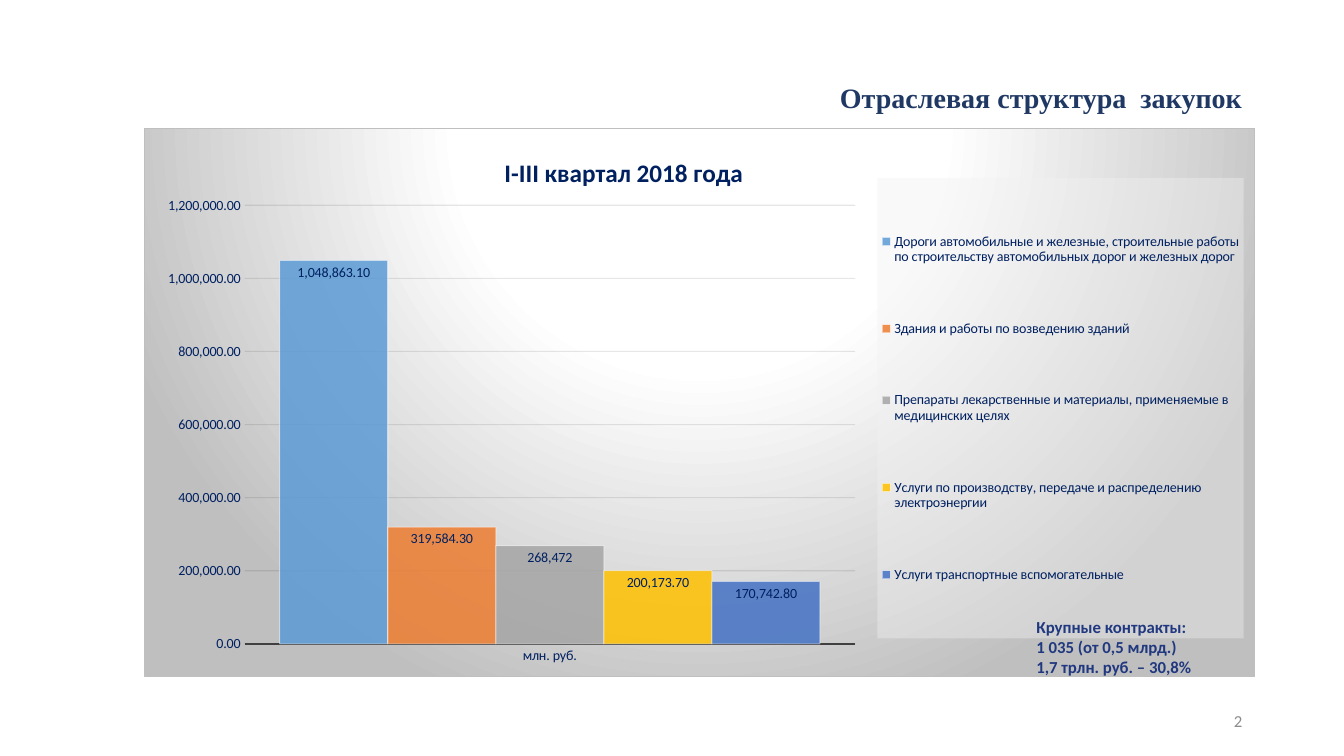
"""Build the slide on the structure of purchases by sector."""
from dataclasses import dataclass

from lxml import etree
from pptx import Presentation
from pptx import util as u
from pptx.chart import data
from pptx.dml.color import RGBColor
from pptx.enum import chart as ch
from pptx.enum import text as tx
from pptx.oxml import parse_xml
from pptx.oxml.ns import nsdecls, qn

NAVY = RGBColor(0x00, 0x20, 0x60)
HEAD = RGBColor(0x20, 0x38, 0x64)
NOTE = RGBColor(0x20, 0x38, 0x7F)
GRAY = RGBColor(0x8C, 0x8C, 0x8C)
DARK = RGBColor(0x40, 0x40, 0x40)
GRID = RGBColor(0x0D, 0x0D, 0x0D)
WHITE = RGBColor(0xFF, 0xFF, 0xFF)
BLUE = RGBColor(0x5B, 0x9B, 0xD5)
ORANGE = RGBColor(0xED, 0x7D, 0x31)
SILVER = RGBColor(0xA5, 0xA5, 0xA5)
GOLD = RGBColor(0xFF, 0xC0, 0x00)
ROYAL = RGBColor(0x44, 0x72, 0xC4)
MONEY = "#,##0.00"

PANEL = f"""<c:spPr {nsdecls('c', 'a')}><a:gradFill><a:gsLst>
<a:gs pos="0"><a:srgbClr val="FFFFFF"/></a:gs>
<a:gs pos="39000"><a:srgbClr val="FFFFFF"/></a:gs>
<a:gs pos="100000"><a:srgbClr val="BFBFBF"/></a:gs></a:gsLst>
<a:path path="circle"><a:fillToRect l="50000" t="-80000" r="50000" b="180000"/></a:path>
</a:gradFill><a:ln w="9525"><a:solidFill><a:srgbClr val="BFBFBF"/></a:solidFill></a:ln></c:spPr>"""
VEIL = f"""<c:spPr {nsdecls('c', 'a')}><a:solidFill><a:srgbClr val="F2F2F2">
<a:alpha val="39000"/></a:srgbClr></a:solidFill><a:ln><a:noFill/></a:ln></c:spPr>"""


@dataclass
class Sector:
    """One bar of the chart."""
    name: str
    value: float
    color: RGBColor
    form: str = MONEY


@dataclass
class Label:
    """A text block with its place and look."""
    lines: list[str]
    box: tuple[float, float, float, float]
    size: int
    color: RGBColor
    font: str = "Calibri"
    bold: bool = True
    align: tx.PP_ALIGN = tx.PP_ALIGN.LEFT
    anchor: tx.MSO_ANCHOR = tx.MSO_ANCHOR.TOP


SECTORS = [
    Sector("Дороги автомобильные и железные, строительные работы по строительству "
           "автомобильных дорог и железных дорог", 1048863.1, BLUE),
    Sector("Здания и работы по возведению зданий", 319584.3, ORANGE),
    Sector("Препараты лекарственные и материалы, применяемые в медицинских целях",
           268472, SILVER, "#,##0"),
    Sector("Услуги по производству, передаче и распределению электроэнергии",
           200173.7, GOLD),
    Sector("Услуги транспортные вспомогательные", 170742.8, ROYAL),
]
TITLE = Label(["Отраслевая структура  закупок"], (6.04, 0.75, 6.38, 0.44), 20, HEAD,
              "Times New Roman", align=tx.PP_ALIGN.RIGHT)
LABELS = [
    Label(["Крупные контракты:", "1 035 (от 0,5 млрд.)", "1,7 трлн. руб. – 30,8%"],
          (10.18, 6.07, 2.18, 0.71), 12, NOTE),
    Label(["2"], (9.42, 6.95, 3, 0.4), 12, GRAY, bold=False,
          align=tx.PP_ALIGN.RIGHT, anchor=tx.MSO_ANCHOR.MIDDLE),
]


def write(shape, label: Label) -> None:
    """Place a shape and fill it with the label's text."""
    shape.left, shape.top, shape.width, shape.height = map(u.Inches, label.box)
    frame = shape.text_frame
    frame.word_wrap = True
    frame.auto_size = tx.MSO_AUTO_SIZE.NONE
    frame.vertical_anchor = label.anchor
    frame.text = "\n".join(label.lines)
    for para in frame.paragraphs:
        para.alignment = label.align
        font = para.font
        font.name, font.size, font.bold = label.font, u.Pt(label.size), label.bold
        font.color.rgb = label.color


def layout(part, after: str | None, **spots: float) -> None:
    """Give a chart part a fixed layout, in shares of the chart."""
    for old in part.findall(qn("c:layout")):
        part.remove(old)
    node = parse_xml(f"<c:layout {nsdecls('c')}><c:manualLayout/></c:layout>")
    if after is None:
        etree.SubElement(node[0], qn("c:layoutTarget")).set("val", "inner")
    for tag in ("xMode", "yMode"):
        etree.SubElement(node[0], qn(f"c:{tag}")).set("val", "edge")
    for tag, share in spots.items():
        etree.SubElement(node[0], qn(f"c:{tag}")).set("val", str(share))
    if after is None:
        part.insert(0, node)
    else:
        part.find(qn(after)).addnext(node)


def fade(root, route: str, share: int) -> None:
    """Set the opacity, in percent, of all colours on a route."""
    for color in root.xpath(f"{route}/a:solidFill/a:srgbClr"):
        etree.SubElement(color, qn("a:alpha")).set("val", str(share * 1000))


def plot(slide) -> None:
    """Draw the column chart with its title and legend."""
    table = data.CategoryChartData(number_format=MONEY)
    table.categories = ["млн. руб."]
    for sector in SECTORS:
        table.add_series(sector.name, [sector.value], sector.form)
    box = map(u.Inches, (1.43, 1.27, 11.02, 5.45))
    chart = slide.shapes.add_chart(ch.XL_CHART_TYPE.COLUMN_CLUSTERED, *box, table).chart
    chart.font.name, chart.font.size = "Calibri", u.Pt(10)
    chart.font.color.rgb = NAVY

    chart.has_title = True
    chart.chart_title.text_frame.text = "I-III квартал 2018 года"
    font = chart.chart_title.text_frame.paragraphs[0].font
    font.name, font.size, font.bold = "Calibri", u.Pt(18), True
    font.color.rgb = NAVY

    chart.has_legend = True
    chart.legend.position = ch.XL_LEGEND_POSITION.RIGHT
    chart.legend.include_in_layout = False

    cats, vals = chart.category_axis, chart.value_axis
    for axis in (cats, vals):
        axis.major_tick_mark = axis.minor_tick_mark = ch.XL_TICK_MARK.NONE
    cats.format.line.color.rgb = DARK
    cats.format.line.width = u.Pt(1.5)
    vals.minimum_scale, vals.maximum_scale, vals.major_unit = 0, 1200000, 200000
    vals.tick_labels.number_format = MONEY
    vals.tick_labels.number_format_is_linked = False
    vals.format.line.fill.background()
    vals.major_gridlines.format.line.color.rgb = GRID
    vals.major_gridlines.format.line.width = u.Pt(0.75)

    bars = chart.plots[0]
    bars.gap_width, bars.overlap, bars.vary_by_categories = 65, 0, False
    for sector, bar in zip(SECTORS, bars.series):
        bar.format.fill.solid()
        bar.format.fill.fore_color.rgb = sector.color
        bar.format.line.color.rgb = WHITE
        bar.format.line.width = u.Pt(0.75)
        tags = bar.data_labels
        tags.show_value = True
        tags.position = ch.XL_LABEL_POSITION.INSIDE_END
        tags.number_format, tags.number_format_is_linked = sector.form, False

    root = chart.element
    fade(root, ".//c:ser/c:spPr", 85)
    fade(root, ".//c:ser/c:spPr/a:ln", 50)
    fade(root, ".//c:majorGridlines/c:spPr/a:ln", 10)
    legend = root.xpath("c:chart/c:legend")[0]
    layout(root.xpath("c:chart/c:plotArea")[0], None, x=0.09, y=0.14, w=0.55, h=0.8)
    layout(legend, "c:legendPos", x=0.66, y=0.09, w=0.33, h=0.84)
    layout(root.xpath("c:chart/c:title")[0], "c:tx", x=0.32, y=0.04)
    legend.find(qn("c:overlay")).addnext(parse_xml(VEIL))
    root.find(qn("c:chart")).addnext(parse_xml(PANEL))


def main() -> None:
    """Build and save the slide."""
    deck = Presentation()
    deck.slide_width, deck.slide_height = u.Inches(13.33), u.Inches(7.5)
    slide = deck.slides.add_slide(deck.slide_layouts[5])
    write(slide.shapes.title, TITLE)
    plot(slide)
    for label in LABELS:
        write(slide.shapes.add_textbox(*map(u.Inches, label.box)), label)
    deck.save("out.pptx")


if __name__ == "__main__":
    main()
